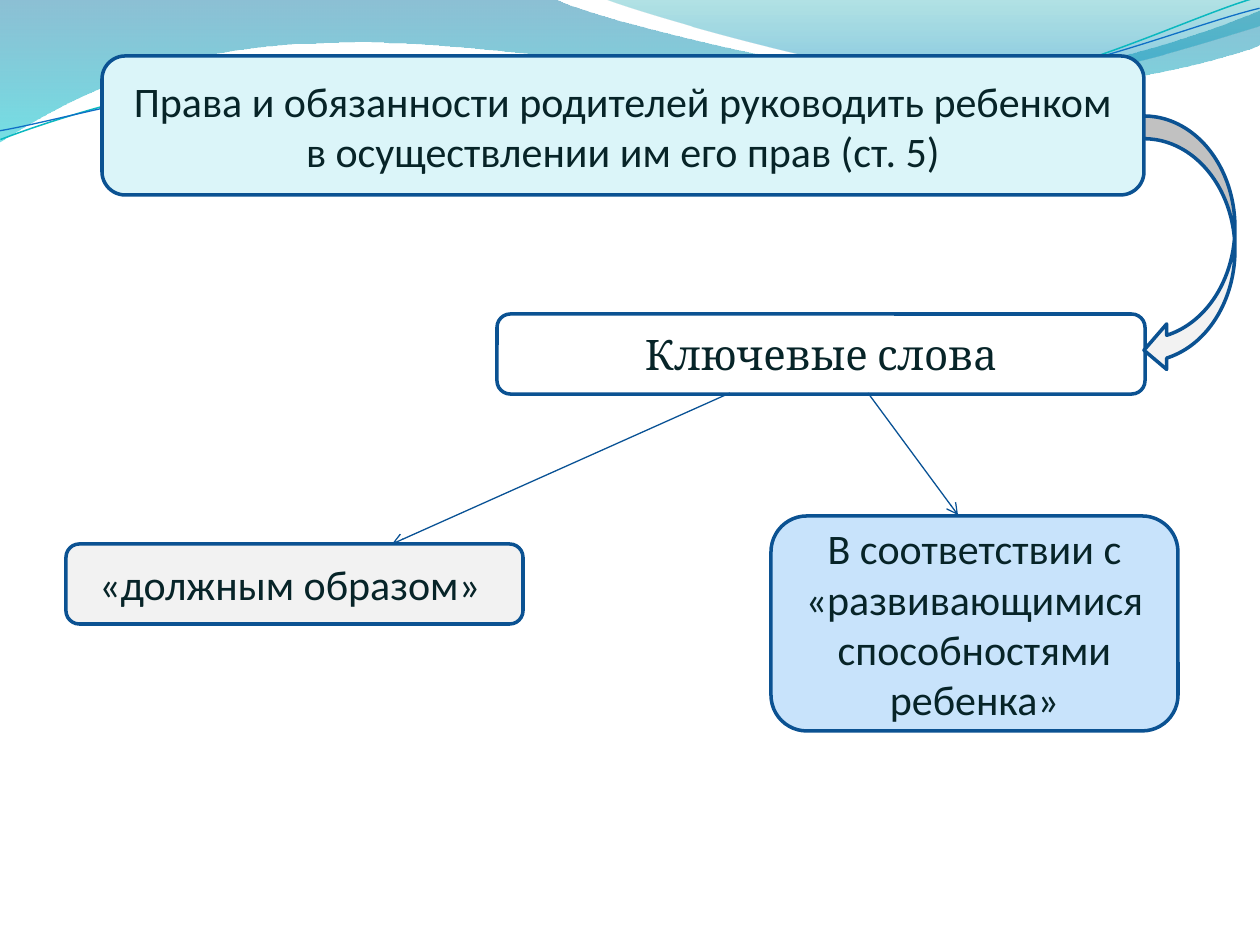
from dataclasses import dataclass
from typing import Any, Optional

from lxml import etree
from pptx import Presentation
from pptx import util as u
from pptx.dml.color import RGBColor
from pptx.enum import shapes, text
from pptx.oxml.ns import qn

PX = 914400 / 126
Point = tuple[int, int]
Segment = tuple[Point, ...]
Stop = tuple[int, str, int]


@dataclass(frozen=True)
class Theme:
    ink: str = "072428"
    border: str = "0B5292"
    arrow: str = "095295"
    aqua: str = "DBF5F9"
    white: str = "FFFFFF"
    grey: str = "F2F2F2"
    sky: str = "C8E3FB"
    teal_line: str = "0AB8BF"
    blue_line: str = "0F6FC6"
    sea: tuple[Stop, Stop] = ((0, "0074A1", 45), (100, "00C6CF", 55))
    lagoon: tuple[Stop, Stop] = ((0, "00A1A9", 30), (80, "008BBF", 45))
    sans: str = "Calibri"
    serif: str = "Cambria"
    text_size: float = 24
    border_width: float = 2
    thin_width: float = 0.75
    teal_width: float = 0.85


THEME = Theme()


@dataclass(frozen=True)
class Box:
    left: int
    top: int
    width: int
    height: int
    fill: str
    label: str = ""
    font: str = THEME.sans
    kind: Any = shapes.MSO_SHAPE.ROUNDED_RECTANGLE


@dataclass(frozen=True)
class Wave:
    start: Point
    segments: tuple[Segment, ...]
    stops: Optional[tuple[Stop, Stop]] = None
    line: str = ""
    width: float = 0
    rotation: float = 0


@dataclass(frozen=True)
class Arrow:
    begin: Point
    end: Point


WAVES = [
    Wave((0, 0), (
        ((554, -1),),
        ((600, 21), (837, 79), (955, 79)),
        ((1075, 79), (1207, 33), (1260, 11)),
        ((1261, 45),),
        ((1239, 55), (1096, 96), (940, 95)),
        ((784, 95), (481, 35), (324, 43)),
        ((163, 45), (58, 105), (-1, 142)),
    ), stops=THEME.sea),
    Wave((604, -1), (
        ((641, 14), (859, 78), (969, 82)),
        ((1079, 87), (1211, 40), (1260, 26)),
        ((1260, 0),),
    ), stops=THEME.lagoon),
    Wave((-2, 110), (
        ((58, 90), (200, 52), (350, 53)),
        ((499, 53), (745, 117), (896, 114)),
        ((1049, 109), (1184, 45), (1260, 27)),
    ), line=THEME.teal_line, width=THEME.teal_width, rotation=357.3),
    Wave((-2, 101), (
        ((57, 94), (207, 57), (357, 58)),
        ((509, 58), (750, 112), (902, 107)),
        ((1052, 104), (1188, 52), (1262, 38)),
    ), line=THEME.blue_line, width=THEME.thin_width, rotation=357.3),
]

BOXES = [
    Box(102, 56, 1042, 139, THEME.aqua,
        "Права и обязанности родителей руководить ребенком в осуществлении им его прав (ст. 5)"),
    Box(497, 314, 648, 80, THEME.white, "Ключевые слова", THEME.serif),
    Box(1144, 116, 91, 257, THEME.grey, kind=shapes.MSO_SHAPE.CURVED_LEFT_ARROW),
    Box(66, 544, 457, 80, THEME.grey, "«должным образом» "),
    Box(771, 516, 407, 215, THEME.sky,
        "В соответствии с «развивающимися способностями ребенка»"),
]

ARROWS = [Arrow((730, 393), (392, 544)), Arrow((868, 393), (958, 515))]


def emu(pixels: float) -> int:
    return round(pixels * PX)


def apply(target: Any, formats: dict[str, Any]) -> None:
    for name, value in formats.items():
        setattr(target, name, value)


def set_line(line: Any, color: str, width: float) -> None:
    line.fill.solid()
    line.fill.fore_color.rgb = RGBColor.from_string(color)
    line.width = u.Pt(width)


def set_gradient(fill: Any, stops: tuple[Stop, Stop]) -> None:
    fill.gradient()
    fill.gradient_angle = 270
    for stop, (position, color, _) in zip(fill.gradient_stops, stops):
        stop.position = position / 100
        stop.color.rgb = RGBColor.from_string(color)
    for element, (_, _, opacity) in zip(fill._fill._gradFill.iter(qn("a:srgbClr")), stops):
        etree.SubElement(element, qn("a:alpha")).set("val", str(opacity * 1000))


def bend_segments(shape: Any, segments: tuple[Segment, ...]) -> None:
    lines = iter(list(shape._element.iter(qn("a:lnTo"))))
    for segment in segments:
        first, *others = [next(lines) for _ in segment]
        if others:
            first.tag = qn("a:cubicBezTo")
        for other in others:
            first.append(other[0])
            other.getparent().remove(other)


def draw_wave(slide: Any, wave: Wave) -> None:
    builder = slide.shapes.build_freeform(*map(emu, wave.start))
    points = [(emu(x), emu(y)) for segment in wave.segments for x, y in segment]
    builder.add_line_segments(points, close=bool(wave.stops))
    shape = builder.convert_to_shape()
    bend_segments(shape, wave.segments)
    shape.rotation = wave.rotation
    shape.shadow.inherit = False
    if wave.stops:
        set_gradient(shape.fill, wave.stops)
        shape.line.fill.background()
    else:
        shape.fill.background()
        set_line(shape.line, wave.line, wave.width)


def draw_box(slide: Any, box: Box) -> None:
    shape = slide.shapes.add_shape(
        box.kind, emu(box.left), emu(box.top), emu(box.width), emu(box.height))
    shape.shadow.inherit = False
    shape.fill.solid()
    shape.fill.fore_color.rgb = RGBColor.from_string(box.fill)
    set_line(shape.line, THEME.border, THEME.border_width)
    if not box.label:
        return
    frame = shape.text_frame
    apply(frame, {"word_wrap": True, "vertical_anchor": text.MSO_ANCHOR.MIDDLE})
    paragraph = frame.paragraphs[0]
    paragraph.alignment = text.PP_ALIGN.CENTER
    run = paragraph.add_run()
    run.text = box.label
    apply(run.font, {"name": box.font, "size": u.Pt(THEME.text_size)})
    run.font.color.rgb = RGBColor.from_string(THEME.ink)


def draw_arrow(slide: Any, arrow: Arrow) -> None:
    connector = slide.shapes.add_connector(
        shapes.MSO_CONNECTOR.STRAIGHT, *map(emu, (*arrow.begin, *arrow.end)))
    set_line(connector.line, THEME.arrow, THEME.thin_width)
    properties = connector._element.spPr
    etree.SubElement(properties.find(qn("a:ln")), qn("a:tailEnd")).set("type", "arrow")
    etree.SubElement(properties, qn("a:effectLst"))


def main() -> None:
    presentation = Presentation()
    apply(presentation, {"slide_width": emu(1260), "slide_height": emu(945)})
    slide = presentation.slides.add_slide(presentation.slide_layouts[6])
    for draw, items in ((draw_wave, WAVES), (draw_box, BOXES), (draw_arrow, ARROWS)):
        for item in items:
            draw(slide, item)
    presentation.save("out.pptx")


if __name__ == "__main__":
    main()
